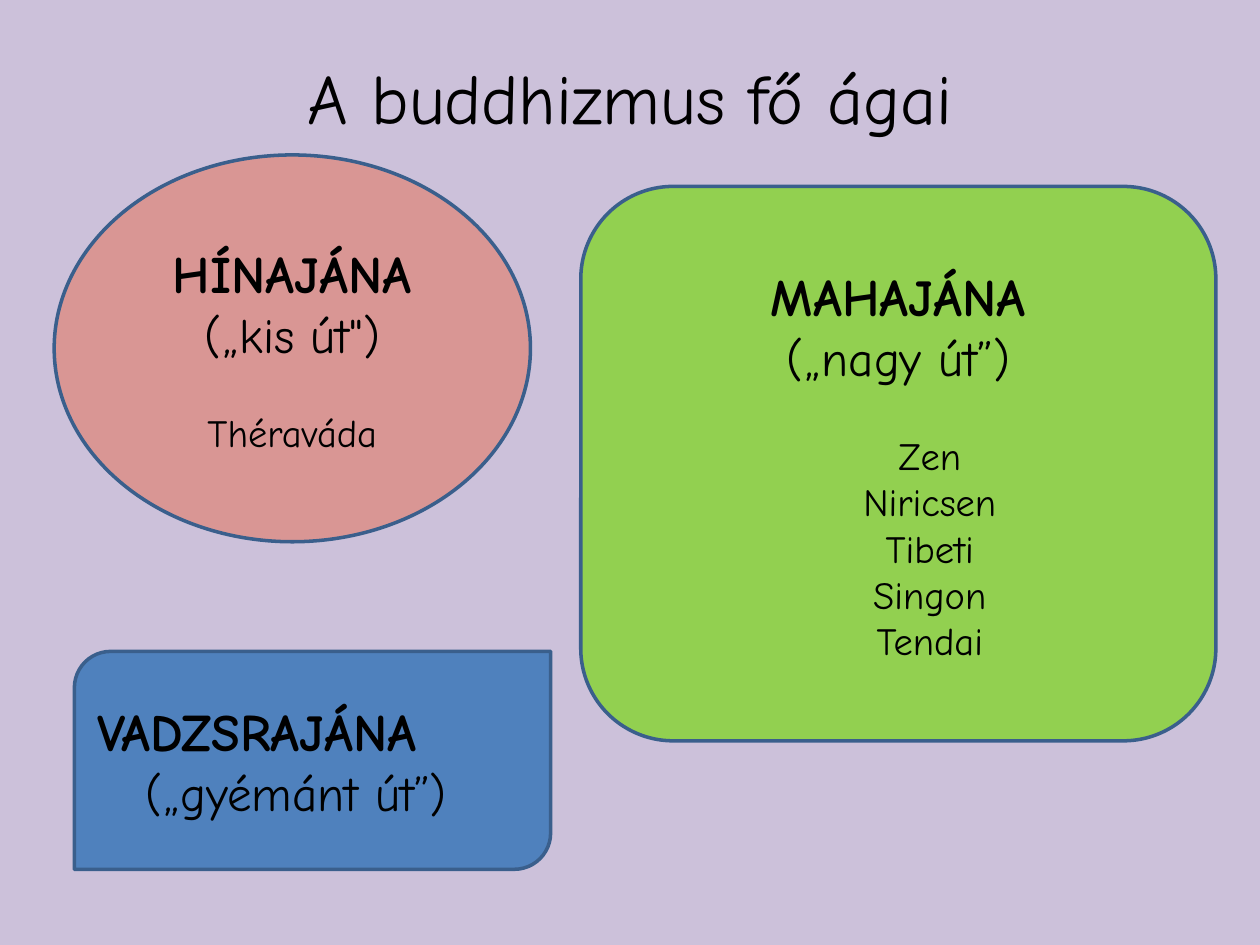
from pptx import Presentation
from pptx.dml.color import RGBColor
from pptx.enum import shapes, text
from pptx.util import Inches, Pt

THEME = {
    "font": "Comic Neue", "bg": "CCC1DA", "ink": "000000", "outline": "3A5F8C",
    "title": 40, "name": 30, "meaning": 28, "school": 22, "gap": 26.4,
}
TITLE = "A buddhizmus fő ágai"
SHAPE, ALIGN = shapes.MSO_SHAPE, text.PP_ALIGN
BRANCHES = [
    {"name": "HÍNAJÁNA", "meaning": "(„kis út\")", "schools": ["Théraváda"],
     "shape": SHAPE.OVAL, "box": (0.43, 1.23, 3.78, 3.07), "fill": "D99694"},
    {"name": "MAHAJÁNA", "meaning": "(„nagy út”)",
     "schools": ["Zen", "Niricsen", "Tibeti", "Singon", "Tendai"], "school_indent": 0.5,
     "shape": SHAPE.ROUNDED_RECTANGLE, "box": (4.61, 1.48, 5.04, 4.4), "fill": "92D050"},
    {"name": "VADZSRAJÁNA", "meaning": "(„gyémánt út”)", "schools": [],
     "align": ALIGN.LEFT, "meaning_indent": 0.38,
     "shape": SHAPE.ROUND_2_DIAG_RECTANGLE, "box": (0.59, 5.17, 3.78, 1.73), "fill": "4F81BD"},
]


def color(key):
    return RGBColor.from_string(THEME.get(key, key))


def write(tf, content, size, bold=False, align=ALIGN.CENTER, indent=0, before=0):
    """Add one paragraph, filling the first one if it is still empty."""
    p = tf.paragraphs[0] if not tf.text else tf.add_paragraph()
    p.alignment = align
    p.space_before = Pt(before)
    if indent:
        p._p.get_or_add_pPr().set("marL", str(Inches(indent)))
    r = p.add_run()
    r.text = content
    r.font.name, r.font.size, r.font.bold = THEME["font"], Pt(THEME[size]), bold
    r.font.color.rgb = color("ink")


def add_branch(slide, branch):
    sp = slide.shapes.add_shape(branch["shape"], *map(Inches, branch["box"]))
    sp.shadow.inherit = False
    sp.fill.solid()
    sp.fill.fore_color.rgb = color(branch["fill"])
    sp.line.color.rgb = color("outline")
    sp.line.width = Pt(2)
    tf = sp.text_frame
    tf.word_wrap = True
    tf.vertical_anchor = text.MSO_ANCHOR.MIDDLE
    align = branch.get("align", ALIGN.CENTER)
    write(tf, branch["name"], "name", bold=True, align=align)
    write(tf, branch["meaning"], "meaning", align=align, indent=branch.get("meaning_indent", 0))
    for i, school in enumerate(branch["schools"]):
        write(tf, school, "school", align=align, indent=branch.get("school_indent", 0),
              before=0 if i else THEME["gap"])


def main():
    prs = Presentation()
    prs.slide_width, prs.slide_height = Inches(10), Inches(7.5)
    s = prs.slides.add_slide(prs.slide_layouts[5])
    s.background.fill.solid()
    s.background.fill.fore_color.rgb = color("bg")
    title = s.shapes.title
    title.left, title.top, title.width, title.height = map(Inches, (0.5, 0.3, 9, 0.93))
    title.text_frame.vertical_anchor = text.MSO_ANCHOR.MIDDLE
    write(title.text_frame, TITLE, "title")
    for branch in BRANCHES:
        add_branch(s, branch)
    prs.save("out.pptx")


if __name__ == "__main__":
    main()
